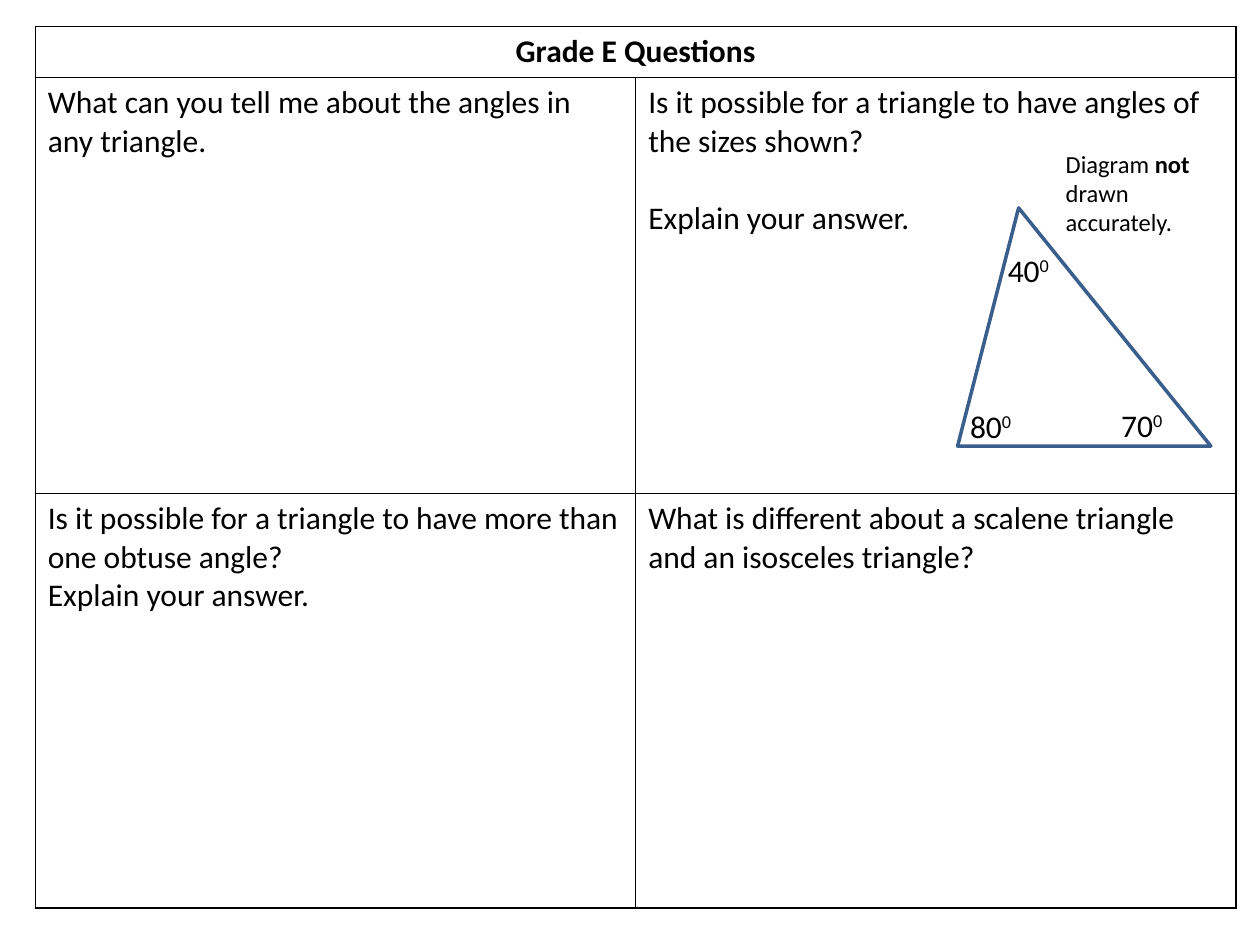
from dataclasses import dataclass

from lxml import etree
from pptx import Presentation
from pptx.dml.color import RGBColor
from pptx.enum.shapes import MSO_SHAPE
from pptx.enum.text import PP_ALIGN
from pptx.oxml.ns import qn
from pptx.util import Inches, Pt

TRIANGLE = MSO_SHAPE.ISOSCELES_TRIANGLE
CENTER = PP_ALIGN.CENTER
BLACK = RGBColor(0x00, 0x00, 0x00)
BLUE = RGBColor(0x3A, 0x5F, 0x8C)
FONT = "Calibri"
LINE_GAP = Pt(22)
ROW_HEIGHTS = (0.4, 3.3, 3.29)
COL_WIDTH = 4.765


@dataclass
class Question:
    row: int
    col: int
    lines: tuple[str, ...]
    gap: Pt = Pt(0)


@dataclass
class Angle:
    left: float
    top: float
    degrees: str


QUESTIONS = (
    Question(1, 0, ("What can you tell me about the angles in any triangle.",)),
    Question(1, 1, ("Is it possible for a triangle to have angles of the sizes shown?",
                    "Explain your answer."), LINE_GAP),
    Question(2, 0, ("Is it possible for a triangle to have more than one obtuse angle?",
                    "Explain your answer.")),
    Question(2, 1, ("What is different about a scalene triangle and an isosceles triangle?",)),
)
ANGLES = (Angle(7.9, 1.94, "40"), Angle(7.6, 3.18, "80"), Angle(8.8, 3.17, "70"))


def add_run(p, text: str, size: int = 18, bold: bool = False):
    r = p.add_run()
    r.text = text
    r.font.name = FONT
    r.font.size = Pt(size)
    r.font.bold = bold
    r.font.color.rgb = BLACK
    return r


def add_text_box(s, left: float, top: float, width: float, height: float):
    box = s.shapes.add_textbox(Inches(left), Inches(top), Inches(width), Inches(height))
    box.text_frame.word_wrap = True
    return box.text_frame.paragraphs[0]


def style_cell(cell) -> None:
    """Clear the fill and draw a black 1 pt line on every side."""
    cell.fill.background()
    tc_pr = cell._tc.get_or_add_tcPr()
    for i, side in enumerate(("a:lnL", "a:lnR", "a:lnT", "a:lnB")):
        ln = etree.Element(qn(side), w=str(Pt(1)))
        fill = etree.SubElement(ln, qn("a:solidFill"))
        etree.SubElement(fill, qn("a:srgbClr"), val=str(BLACK))
        tc_pr.insert(i, ln)


def add_question_table(s) -> None:
    table = s.shapes.add_table(3, 2, Inches(0.28), Inches(0.21),
                               Inches(2 * COL_WIDTH), Inches(sum(ROW_HEIGHTS))).table
    table.first_row = False
    table.horz_banding = False
    for col in table.columns:
        col.width = Inches(COL_WIDTH)
    for row, height in zip(table.rows, ROW_HEIGHTS):
        row.height = Inches(height)
    for cell in table.iter_cells():
        style_cell(cell)

    # Heading across both columns
    heading = table.cell(0, 0)
    heading.merge(table.cell(0, 1))
    p = heading.text_frame.paragraphs[0]
    p.alignment = CENTER
    add_run(p, "Grade E Questions", bold=True)

    # One question in each cell
    for q in QUESTIONS:
        tf = table.cell(q.row, q.col).text_frame
        for i, line in enumerate(q.lines):
            p = tf.add_paragraph() if i else tf.paragraphs[0]
            if i:
                p.space_before = q.gap
            add_run(p, line)


def add_triangle(s) -> None:
    sp = s.shapes.add_shape(TRIANGLE, Inches(7.6), Inches(1.65), Inches(2.01), Inches(1.89))
    sp.adjustments[0] = 0.241
    sp.shadow.inherit = False
    sp.fill.background()
    sp.line.color.rgb = BLUE
    sp.line.width = Pt(2)


def add_angle(s, angle: Angle) -> None:
    p = add_text_box(s, angle.left, angle.top, 0.81, 0.4)
    add_run(p, angle.degrees)
    r = add_run(p, "0")
    r.font._element.set("baseline", "30000")


def add_accuracy_note(s) -> None:
    p = add_text_box(s, 8.36, 1.13, 1.42, 0.81)
    add_run(p, "Diagram ", 14)
    add_run(p, "not ", 14, bold=True)
    add_run(p, "drawn accurately.", 14)


def main() -> None:
    prs = Presentation()
    prs.slide_width, prs.slide_height = Inches(10), Inches(7.5)
    s = prs.slides.add_slide(prs.slide_layouts[6])
    add_question_table(s)
    add_triangle(s)
    for angle in ANGLES:
        add_angle(s, angle)
    add_accuracy_note(s)
    prs.save("out.pptx")


if __name__ == "__main__":
    main()
